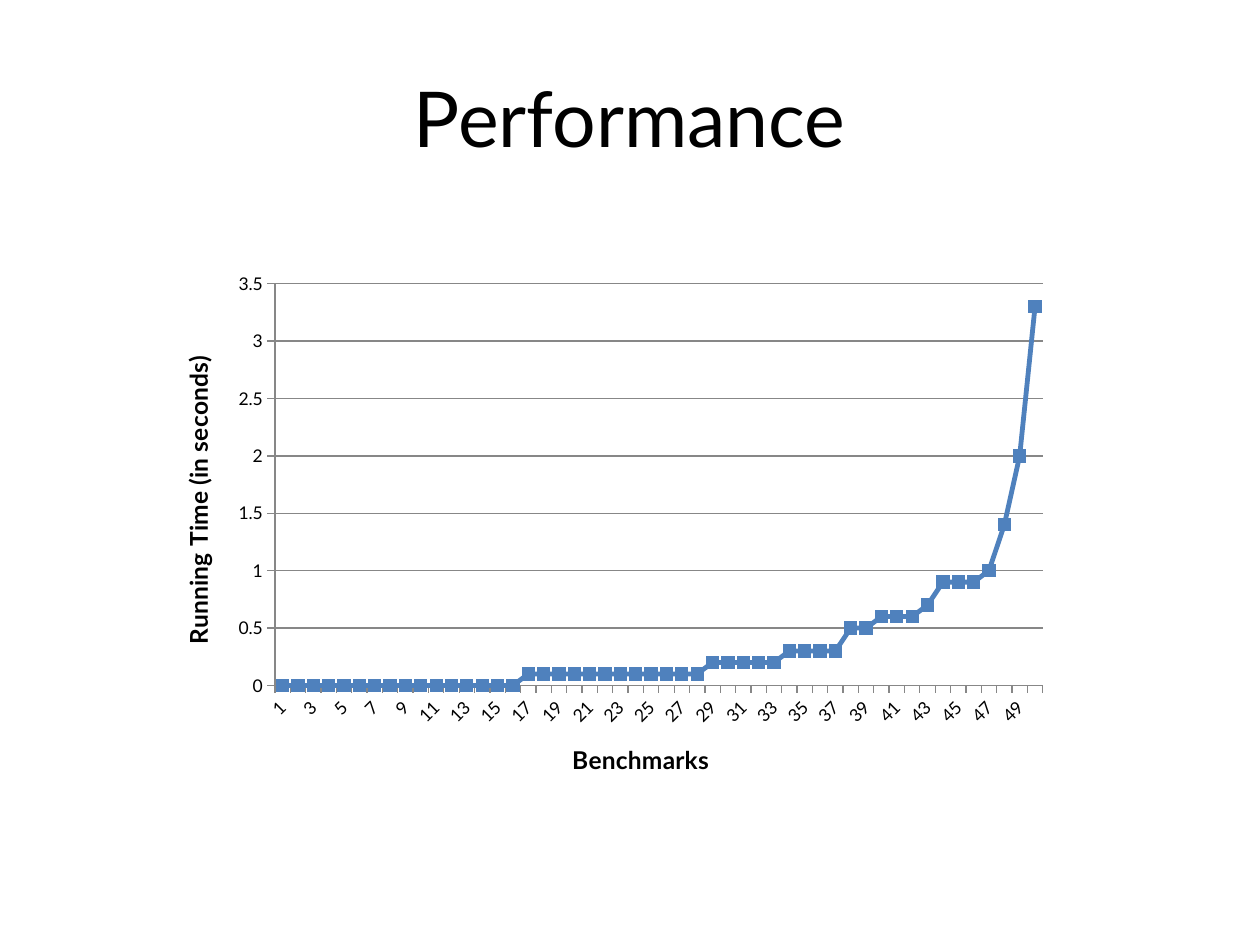
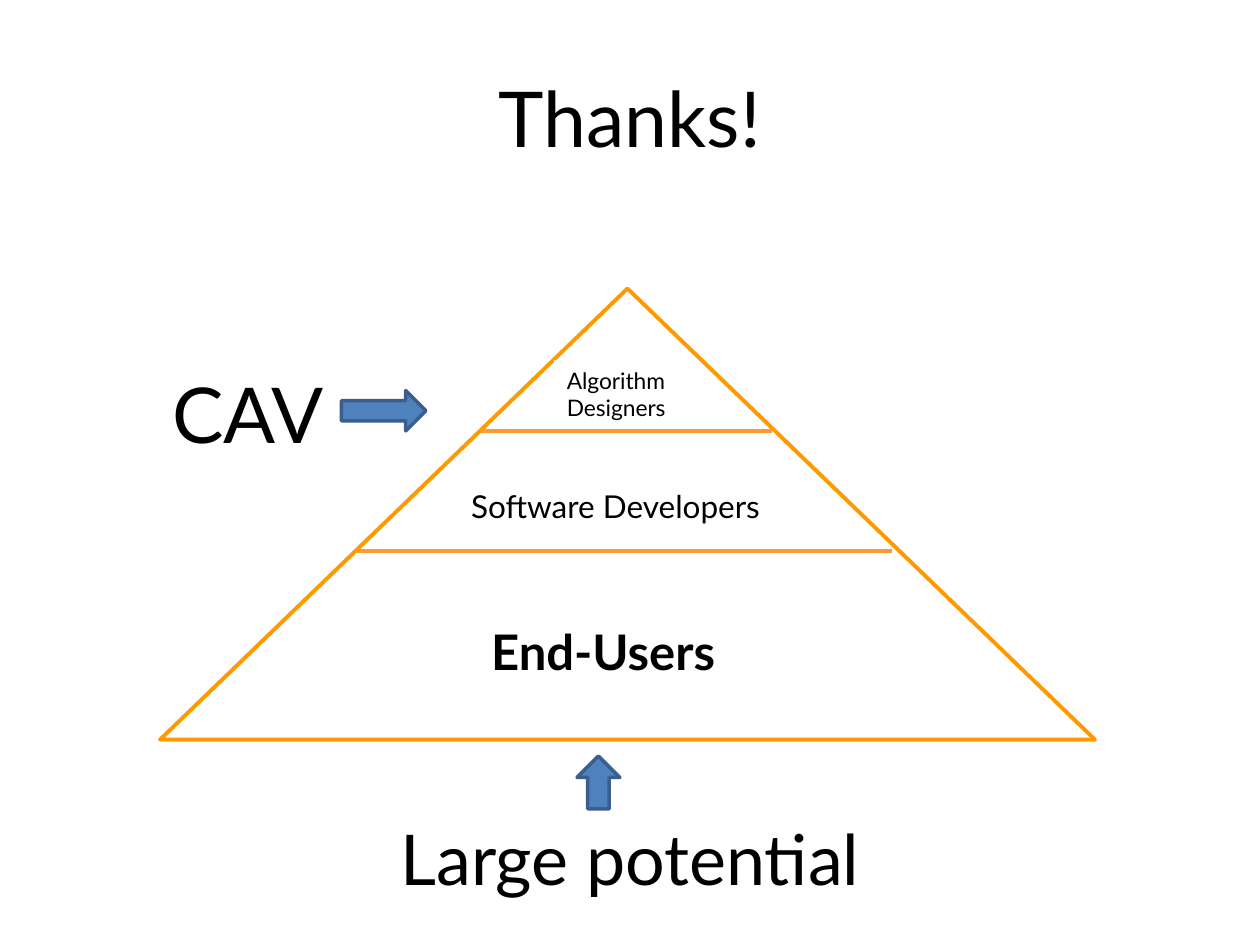
from lxml import etree
from pptx import Presentation
from pptx.chart.data import CategoryChartData
from pptx.dml.color import RGBColor
from pptx.enum import chart as charts, shapes, text
from pptx.oxml import parse_xml
from pptx.oxml.ns import nsdecls, qn
from pptx.util import Inches, Pt

# Shared style
FONT = "Lato"
BLACK, WHITE, GREY = "000000", "FFFFFF", "878787"
BLUE, DARK_BLUE = "4F81BD", "3A5F8C"
ORANGE, LIGHT_ORANGE = "FF9900", "FF9933"
TITLE_BOX = (0.5, 0.3, 9, 1.25)

# Performance slide: running time of each benchmark, as (seconds, how many)
CHART_BOX = (1.25, 2.08, 7.17, 4.31)
PLOT_AREA = {"x": 0.13, "y": 0.04, "w": 0.85, "h": 0.74}
RUNNING_TIMES = [(0, 16), (0.1, 12), (0.2, 5), (0.3, 4), (0.5, 2), (0.6, 3), (0.7, 1),
                 (0.9, 3), (1, 1), (1.4, 1), (2, 1), (3.3, 1)]

# Thanks slide: lines, box, size, bold, line spacing, space after
PYRAMID_BOX = (1.27, 2.29, 7.42, 3.58)
LEVELS = [
    (["End-Users"], (3.8, 4.88, 2.31, 0.71), 28, True, None, None),
    (["Algorithm", "Designers"], (4.4, 2.86, 1.04, 0.65), 13, False, None, None),
    (["Software Developers"], (3.64, 3.77, 2.72, 0.62), 18, False, 1.15, 10),
]
DIVIDERS = [(3.82, 6.13, 3.42), (2.83, 7.08, 4.37)]  # left, right, height
CALLOUTS = [
    ("CAV", (1.27, 2.86, 1.83, 0.84), 44,
     shapes.MSO_SHAPE.RIGHT_ARROW, (2.71, 3.1, 0.67, 0.32)),
    ("Large potential", (3.08, 6.42, 4.17, 0.77), 40,
     shapes.MSO_SHAPE.UP_ARROW, (4.58, 6, 0.34, 0.42)),
]


def color(value):
    return RGBColor.from_string(value)


def inches(box):
    return [Inches(length) for length in box]


def style_font(font, size, bold=False):
    font.name, font.size, font.bold = FONT, Pt(size), bold
    font.color.rgb = color(BLACK)


def style_line(line, value, width):
    line.color.rgb = color(value)
    line.width = Pt(width)


def write(shape, lines, size, bold=False, align=text.PP_ALIGN.LEFT,
          anchor=text.MSO_ANCHOR.TOP, spacing=None, after=None):
    frame = shape.text_frame
    frame.word_wrap = True
    frame.vertical_anchor = anchor
    frame.text = "\n".join(lines)
    for paragraph in frame.paragraphs:
        paragraph.alignment = align
        if spacing:
            paragraph.line_spacing = spacing
        if after:
            paragraph.space_after = Pt(after)
        for run in paragraph.runs:
            style_font(run.font, size, bold)


def add_text(slide, lines, box, size, **options):
    write(slide.shapes.add_textbox(*inches(box)), lines, size, **options)


def add_shape(slide, kind, box, fill, line, width):
    shape = slide.shapes.add_shape(kind, *inches(box))
    shape.shadow.inherit = False
    shape.fill.solid()
    shape.fill.fore_color.rgb = color(fill)
    style_line(shape.line, line, width)
    return shape


def add_divider(slide, left, right, height):
    line = slide.shapes.add_connector(shapes.MSO_CONNECTOR.STRAIGHT,
                                      *inches((left, height, right, height)))
    style_line(line.line, LIGHT_ORANGE, 2.25)
    etree.SubElement(line._element.spPr, qn("a:effectLst"))


def add_slide(presentation, title):
    slide = presentation.slides.add_slide(presentation.slide_layouts[6])
    add_text(slide, [title], TITLE_BOX, 44, align=text.PP_ALIGN.CENTER,
             anchor=text.MSO_ANCHOR.MIDDLE)
    return slide


def style_axis(axis, title):
    axis.has_title = True
    frame = axis.axis_title.text_frame
    frame.text = title
    style_font(frame.paragraphs[0].runs[0].font, 14, True)
    style_font(axis.tick_labels.font, 10)
    axis.major_tick_mark = charts.XL_TICK_MARK.OUTSIDE
    style_line(axis.format.line, GREY, 0.75)


def set_plot_area(chart):
    plot_area = chart._chartSpace.find(".//" + qn("c:plotArea"))
    for layout in plot_area.findall(qn("c:layout")):
        plot_area.remove(layout)
    modes = '<c:layoutTarget val="inner"/><c:xMode val="edge"/><c:yMode val="edge"/>'
    sizes = "".join(f'<c:{key} val="{value}"/>' for key, value in PLOT_AREA.items())
    plot_area.insert(0, parse_xml(f'<c:layout {nsdecls("c")}><c:manualLayout>'
                                  f"{modes}{sizes}</c:manualLayout></c:layout>"))


def add_performance(presentation):
    slide = add_slide(presentation, "Performance")
    values = [seconds for seconds, count in RUNNING_TIMES for _ in range(count)]
    data = CategoryChartData()
    data.categories = [str(number) for number in range(1, len(values) + 1)]
    data.add_series("Series 1", values)
    chart = slide.shapes.add_chart(charts.XL_CHART_TYPE.LINE_MARKERS,
                                   *inches(CHART_BOX), data).chart
    chart.has_title = chart.has_legend = False
    style_font(chart.font, 10)
    chart.plots[0].vary_by_categories = False

    # Series
    series = chart.plots[0].series[0]
    series.smooth = False
    style_line(series.format.line, BLUE, 2.75)
    series.marker.style = charts.XL_MARKER_STYLE.SQUARE
    series.marker.size = 7
    series.marker.format.fill.solid()
    series.marker.format.fill.fore_color.rgb = color(BLUE)
    style_line(series.marker.format.line, BLUE, 0.75)

    # Axes
    style_axis(chart.category_axis, "Benchmarks")
    style_axis(chart.value_axis, "Running Time (in seconds)")
    axis = chart.value_axis
    axis.minimum_scale, axis.maximum_scale, axis.major_unit = 0, 3.5, 0.5
    axis.has_major_gridlines = True
    style_line(axis.major_gridlines.format.line, GREY, 0.75)
    axis.tick_labels.number_format = "General"
    axis.tick_labels.number_format_is_linked = False

    # Slanted category labels, upright value title
    for place, degrees in (("c:catAx/c:txPr", -45), ("c:valAx/c:title", -90)):
        body = chart._chartSpace.xpath(f".//{place}//a:bodyPr")[0]
        body.set("rot", str(degrees * 60000))
        body.set("vert", "horz")
    set_plot_area(chart)


def add_thanks(presentation):
    slide = add_slide(presentation, "Thanks!")

    # Pyramid
    add_shape(slide, shapes.MSO_SHAPE.ISOSCELES_TRIANGLE, PYRAMID_BOX, WHITE, ORANGE, 2.25)
    for lines, box, size, bold, spacing, after in LEVELS:
        level = add_shape(slide, shapes.MSO_SHAPE.RECTANGLE, box, WHITE, WHITE, 0.5)
        write(level, lines, size, bold, spacing=spacing, after=after)
    for divider in DIVIDERS:
        add_divider(slide, *divider)

    # Callouts with arrows
    for label, box, size, arrow, arrow_box in CALLOUTS:
        add_text(slide, [label], box, size)
        add_shape(slide, arrow, arrow_box, BLUE, DARK_BLUE, 2)


def main():
    presentation = Presentation()
    presentation.slide_width, presentation.slide_height = inches((10, 7.5))
    add_performance(presentation)
    add_thanks(presentation)
    presentation.save("out.pptx")


if __name__ == "__main__":
    main()
